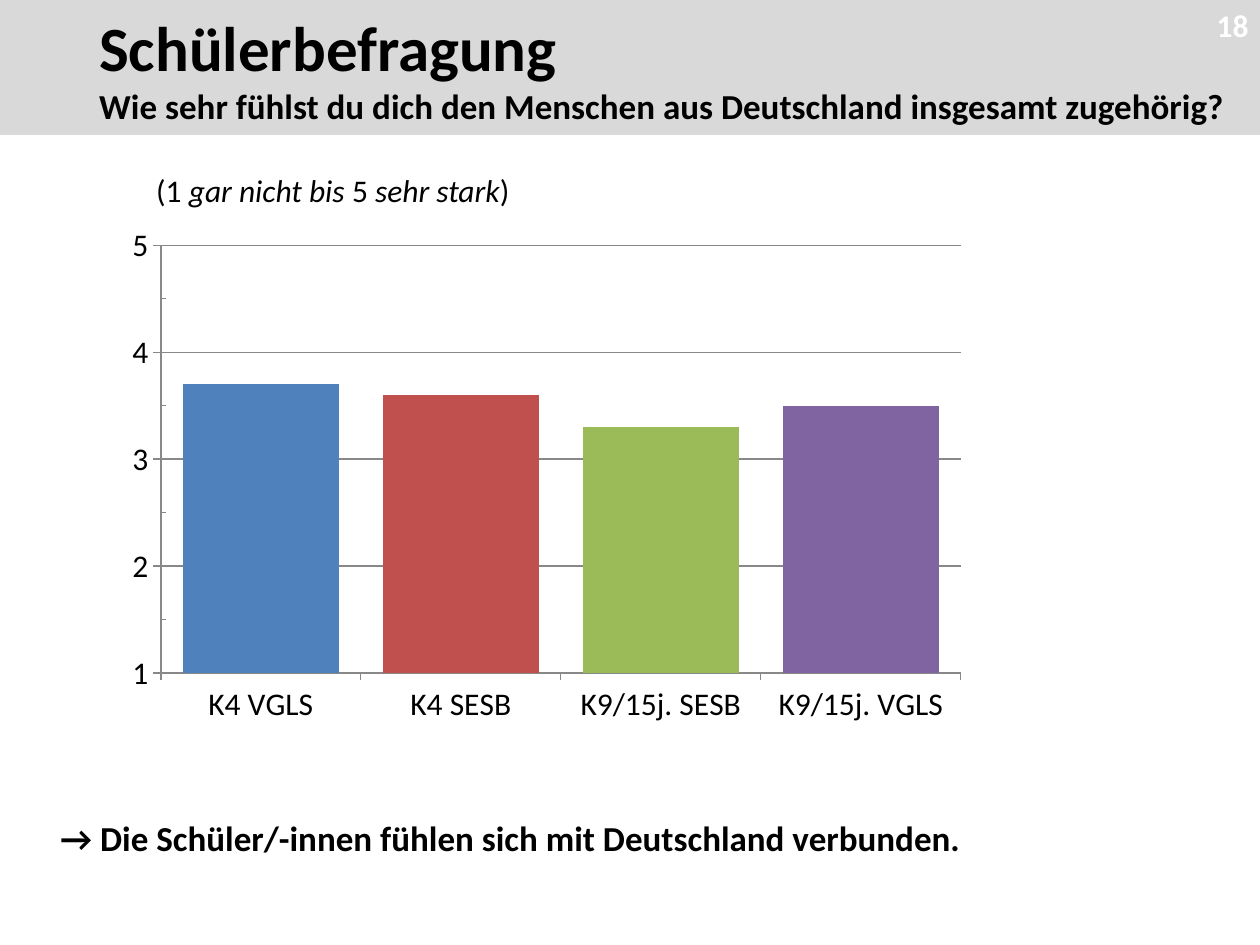
"""Builds the survey slide on how strongly pupils feel they belong with people in Germany."""
from dataclasses import dataclass

from lxml import etree
from pptx import Presentation
from pptx.chart.data import CategoryChartData
from pptx.dml.color import RGBColor as RGB
from pptx.enum.chart import XL_CHART_TYPE as CT, XL_TICK_MARK as TICK
from pptx.enum.shapes import MSO_SHAPE as SHAPE
from pptx.enum.text import MSO_ANCHOR as ANCHOR, MSO_AUTO_SIZE as FIT, PP_ALIGN as ALIGN
from pptx.oxml.ns import qn
from pptx.util import Cm, Pt


@dataclass(frozen=True)
class Theme:
    font: str = "Calibri"
    text: str = "000000"
    inverse: str = "FFFFFF"
    band: str = "D9D9D9"
    axis: str = "888888"
    bars: tuple = ("4F81BD", "C0504D", "9BBB59", "8064A2")
    title: int = 36
    strong: int = 20
    body: int = 18
    hairline: float = 0.75


class Deck:
    def __init__(self, prs, theme):
        self.theme = theme
        self.s = prs.slides.add_slide(prs.slide_layouts[6])

    def style(self, font, size, color=None, bold=False):
        font.name, font.size, font.bold = self.theme.font, Pt(size), bold
        font.color.rgb = RGB.from_string(color or self.theme.text)

    def band(self, box, lines, indent):
        sp = self.s.shapes.add_shape(SHAPE.RECTANGLE, *map(Cm, box))
        sp.shadow.inherit = False
        sp.fill.solid()
        sp.fill.fore_color.rgb = RGB.from_string(self.theme.band)
        sp.line.fill.background()
        tf = sp.text_frame
        tf.word_wrap, tf.vertical_anchor = False, ANCHOR.MIDDLE
        for i, (text, size) in enumerate(lines):
            p = tf.add_paragraph() if i else tf.paragraphs[0]
            p.alignment = ALIGN.LEFT
            p._p.get_or_add_pPr().set("marL", str(Cm(indent)))
            p.add_run().text = text
            self.style(p.font, size, bold=True)

    def text(self, box, runs, size, bold=False):
        tf = self.s.shapes.add_textbox(*map(Cm, box)).text_frame
        tf.word_wrap, tf.auto_size = True, FIT.SHAPE_TO_FIT_TEXT
        p = tf.paragraphs[0]
        self.style(p.font, size, bold=bold)
        for text, italic in runs:
            r = p.add_run()
            r.text = text
            if italic:
                r.font.italic = True

    def page_number(self, box, number):
        tf = self.s.shapes.add_textbox(*map(Cm, box)).text_frame
        tf.word_wrap, tf.vertical_anchor = True, ANCHOR.MIDDLE
        tf.margin_left = tf.margin_right = tf.margin_top = tf.margin_bottom = 0
        p = tf.paragraphs[0]
        p.alignment = ALIGN.RIGHT
        p.add_run().text = number
        self.style(p.font, self.theme.body, self.theme.inverse, bold=True)

    def hairline(self, line):
        line.color.rgb = RGB.from_string(self.theme.axis)
        line.width = Pt(self.theme.hairline)

    def column_chart(self, box, name, values, plot_area):
        data = CategoryChartData(number_format="General")
        data.categories = list(values)
        data.add_series(name, list(values.values()))
        chart = self.s.shapes.add_chart(CT.COLUMN_CLUSTERED, *map(Cm, box), data).chart
        chart.has_legend = chart.has_title = False
        self.style(chart.font, self.theme.body)

        plot = chart.plots[0]
        plot.gap_width, plot.vary_by_categories = 28, False
        series = plot.series[0]
        for i, color in enumerate(self.theme.bars):
            fill = series.points[i].format.fill if i else series.format.fill
            fill.solid()
            fill.fore_color.rgb = RGB.from_string(color)

        for axis in (chart.category_axis, chart.value_axis):
            axis.major_tick_mark = TICK.OUTSIDE
            self.hairline(axis.format.line)
        scale = chart.value_axis
        scale.minimum_scale, scale.maximum_scale = 1, 5
        scale.major_unit, scale.minor_unit = 1, 0.5
        scale.minor_tick_mark = TICK.INSIDE
        scale.has_major_gridlines = True
        self.hairline(scale.major_gridlines.format.line)
        self.place_plot(chart, plot_area)

    def place_plot(self, chart, plot_area):
        area = chart._chartSpace.chart.plotArea
        for old in area.findall(qn("c:layout")):
            area.remove(old)
        layout = etree.Element(qn("c:layout"))
        manual = etree.SubElement(layout, qn("c:manualLayout"))
        settings = {"layoutTarget": "inner", "xMode": "edge", "yMode": "edge"}
        settings.update(zip("xywh", plot_area))
        for tag, value in settings.items():
            etree.SubElement(manual, qn(f"c:{tag}")).set("val", str(value))
        area.insert(0, layout)


def main():
    theme = Theme()
    prs = Presentation()
    prs.slide_width, prs.slide_height = Cm(25.4), Cm(19.05)
    deck = Deck(prs, theme)
    deck.text((0.97, 16.33, 21.79, 1.12),
              [("→ Die Schüler/-innen fühlen sich mit Deutschland verbunden.", False)],
              theme.strong, bold=True)
    deck.text((2.9, 3.33, 21.79, 1.02),
              [("(1 ", False), ("gar nicht bis ", True), ("5 ", False),
               ("sehr stark", True), (")", False)],
              theme.body)
    deck.column_chart((1.3, 4.34, 19.43, 12.14), "Series 1",
                      {"K4 VGLS": 3.7, "K4 SESB": 3.6,
                       "K9/15j. SESB": 3.3, "K9/15j. VGLS": 3.5},
                      (0.1, 0.05, 0.83, 0.71))
    deck.band((0, 0, 25.4, 2.72),
              [("Schülerbefragung", theme.title),
               ("Wie sehr fühlst du dich den Menschen aus Deutschland insgesamt zugehörig?",
                theme.strong)],
              indent=1.75)
    deck.page_number((22.38, 0, 2.79, 1.02), "18")
    prs.save("out.pptx")


if __name__ == "__main__":
    main()
